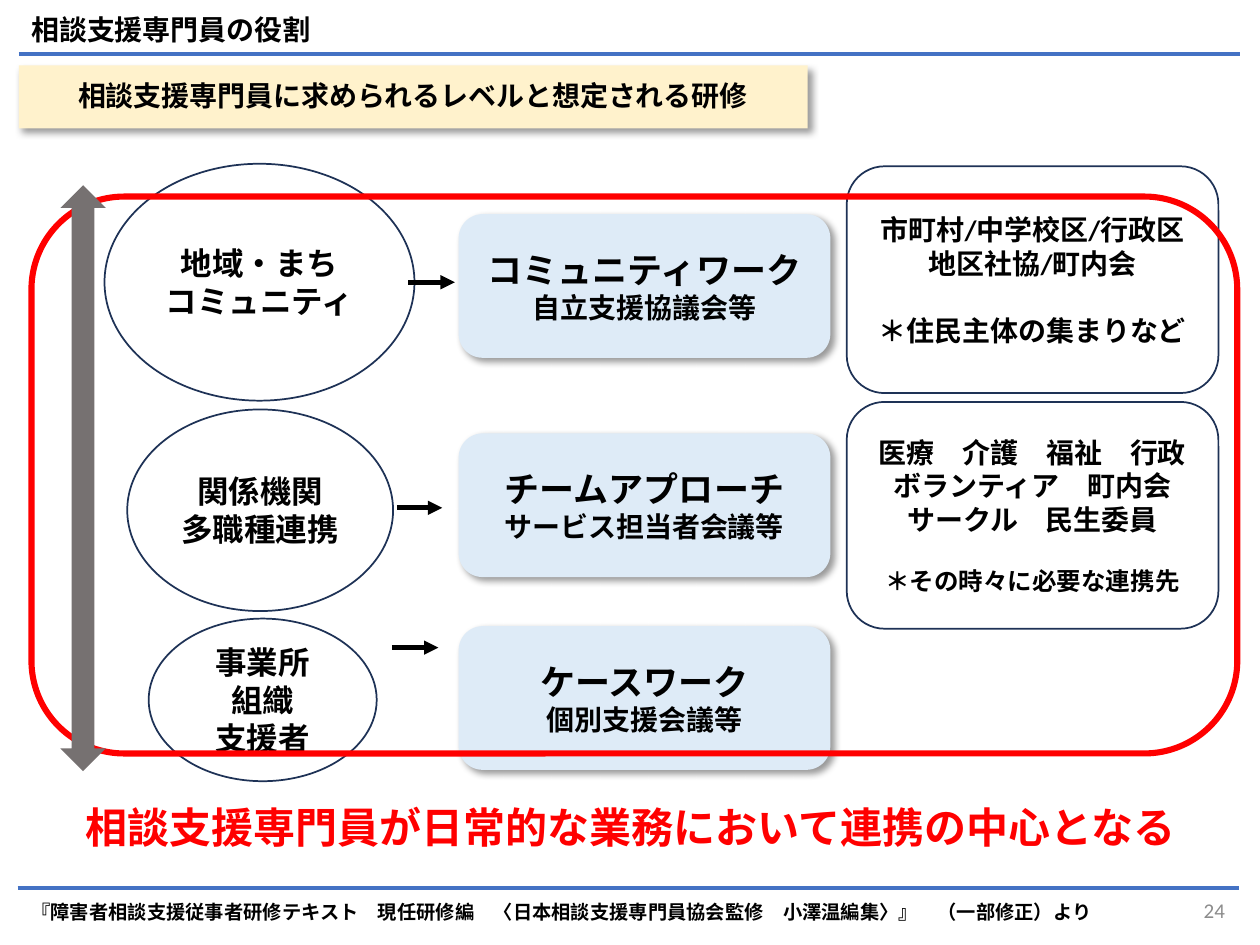
from lxml import etree
from pptx import Presentation
from pptx.dml.color import RGBColor
from pptx.enum.shapes import MSO_CONNECTOR, MSO_SHAPE
from pptx.enum.text import MSO_ANCHOR, PP_ALIGN
from pptx.oxml.ns import qn
from pptx.util import Pt

PX = 9144
RECT, ROUND = MSO_SHAPE.RECTANGLE, MSO_SHAPE.ROUNDED_RECTANGLE
OVAL, ARROW = MSO_SHAPE.OVAL, MSO_SHAPE.UP_DOWN_ARROW
STRAIGHT = MSO_CONNECTOR.STRAIGHT
MID, LOW = MSO_ANCHOR.MIDDLE, MSO_ANCHOR.BOTTOM
LEFT, MIDST, RIGHT, FULL = PP_ALIGN.LEFT, PP_ALIGN.CENTER, PP_ALIGN.RIGHT, PP_ALIGN.JUSTIFY
NAVY, RED, BLUE, BLACK = "1E3256", "FF0000", "4472C4", "000000"

deck = Presentation()
deck.slide_width, deck.slide_height = 1000 * PX, 750 * PX
slide = deck.slides.add_slide(deck.slide_layouts[6])
shapes = slide.shapes


def paint(form, tone):
    form.solid()
    form.fore_color.rgb = RGBColor.from_string(tone)


def box(kind, spot, rows=(), fill=None, line=None, width=1, shade=False, inset=10,
        font="Calibri", tone=BLACK, bold=True, align=MIDST, anchor=MID, space=None):
    spot = [n * PX for n in spot]
    if kind is None:
        item = shapes.add_textbox(*spot)
    else:
        item = shapes.add_shape(kind, *spot)
        item.shadow.inherit = False
        if fill:
            paint(item.fill, fill)
        else:
            item.fill.background()
        if line:
            paint(item.line.fill, line)
            item.line.width = Pt(width)
        else:
            item.line.fill.background()
    if shade:
        glow = etree.SubElement(item._element.spPr.find(qn("a:effectLst")), qn("a:outerShdw"),
                                blurRad="50800", dist="38100", dir="2700000",
                                algn="tl", rotWithShape="0")
        ink = etree.SubElement(glow, qn("a:prstClr"), val="black")
        etree.SubElement(ink, qn("a:alpha"), val="40000")
    frame = item.text_frame
    look = {"word_wrap": True, "vertical_anchor": anchor,
            "margin_left": inset * PX, "margin_right": inset * PX,
            "margin_top": 5 * PX, "margin_bottom": 5 * PX}
    for key, value in look.items():
        setattr(frame, key, value)
    for i, (text, size, *gap) in enumerate(rows):
        para = frame.add_paragraph() if i else frame.paragraphs[0]
        para.alignment, para.line_spacing = align, space
        if gap:
            para.space_before = Pt(gap[0])
        run = para.add_run()
        run.text = text
        for key, value in {"name": font, "size": Pt(size), "bold": bold}.items():
            setattr(run.font, key, value)
        paint(run.font.fill, tone)


box(None, (894, 710, 88, 25), [("24", 12)], tone="8C8C8C", bold=False, align=RIGHT)

works = [
    (170, "コミュニティワーク", "自立支援協議会等"),
    (344, "チームアプローチ", "サービス担当者会議等"),
    (497, "ケースワーク", "個別支援会議等"),
]
for top, head, sub in works:
    box(ROUND, (364, top, 295, 114), [(head, 20), (sub, 16)], fill="DEEBF7", shade=True)

groups = [
    ((83, 130, 246, 188), ("地域・まち", "コミュニティ")),
    ((101, 325, 211, 160), ("関係機関", "多職種連携")),
    ((118, 491, 181, 129), ("事業所", "組織", "支援者")),
]
for spot, names in groups:
    box(OVAL, spot, [(name, 18) for name in names], line=NAVY, inset=4)

lines = [
    (15, 984, 43, BLUE, 2.5, False),
    (14, 983, 705, BLUE, 2.5, False),
    (324, 361, 224, BLACK, 2.75, True),
    (315, 351, 403, BLACK, 2.75, True),
    (311, 348, 514, BLACK, 2.75, True),
]
for start, end, top, tone, width, tip in lines:
    rule = shapes.add_connector(STRAIGHT, start * PX, top * PX, end * PX, top * PX)
    paint(rule.line.fill, tone)
    rule.line.width = Pt(width)
    if tip:
        etree.SubElement(rule.line._get_or_add_ln(), qn("a:tailEnd"), type="triangle")
    etree.SubElement(rule._element.spPr, qn("a:effectLst"))

partners = [
    (132, [("市町村/中学校区/行政区", 16), ("地区社協/町内会", 16),
           ("＊住民主体の集まりなど", 16, 19)]),
    (319, [("医療　介護　福祉　行政", 16), ("ボランティア　町内会", 16),
           ("サークル　民生委員", 16), ("＊その時々に必要な連携先", 14, 17)]),
]
for top, rows in partners:
    box(ROUND, (672, top, 295, 180), rows, line=NAVY)

box(ROUND, (25, 156, 957, 442), line=RED, width=3.5)
box(ARROW, (48, 147, 36, 465), fill="767171")

box(None, (16, 622, 969, 73), [("相談支援専門員が日常的な業務において連携の中心となる", 24)],
    font="Arial", tone=RED, space=0.9)
box(None, (15, 707, 888, 31),
    [("『障害者相談支援従事者研修テキスト　現任研修編　〈日本相談支援専門員協会監修　小澤温編集〉』　（一部修正）より", 11)],
    align=LEFT, anchor=LOW, space=0.9)
box(None, (15, 8, 967, 34), [("相談支援専門員の役割", 16)], font="Arial", align=FULL, space=0.9)
box(RECT, (15, 52, 626, 50), [("相談支援専門員に求められるレベルと想定される研修", 16)],
    fill="FFF2CC", shade=True, font="Arial", space=0.9)

deck.save("out.pptx")
